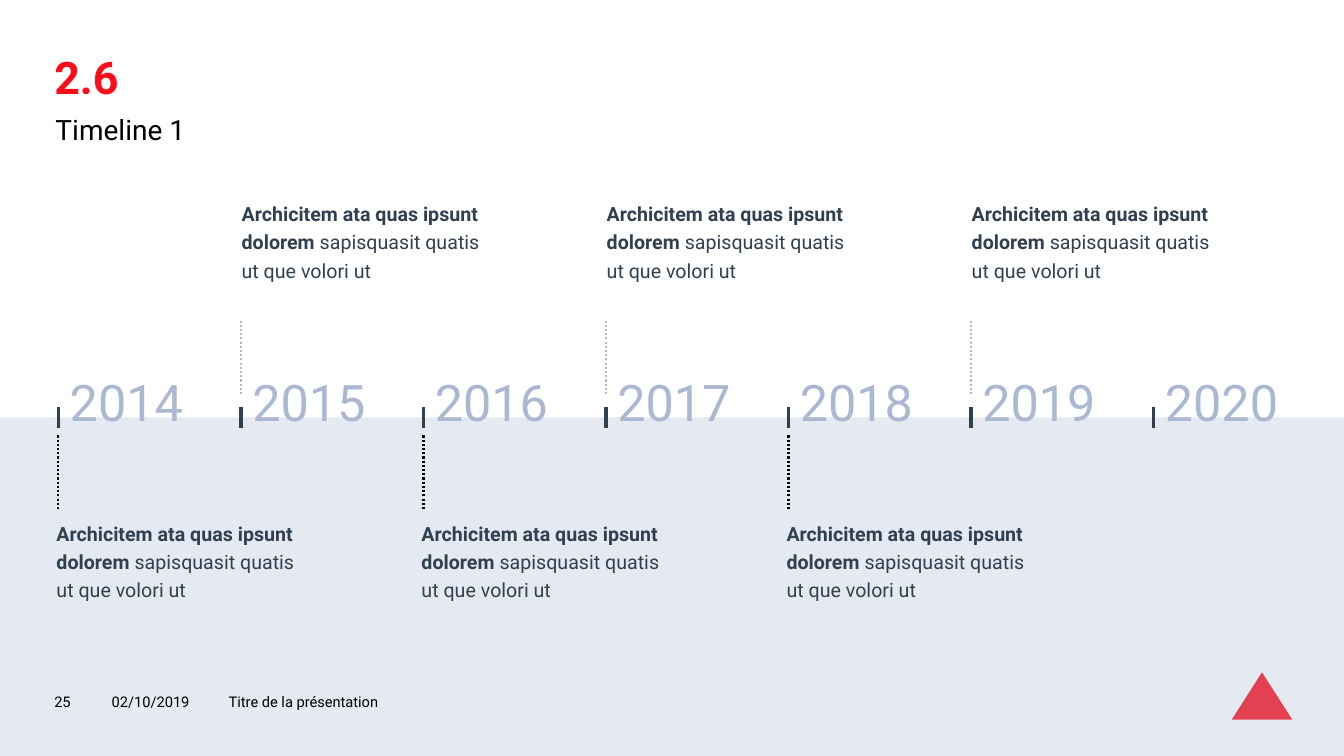
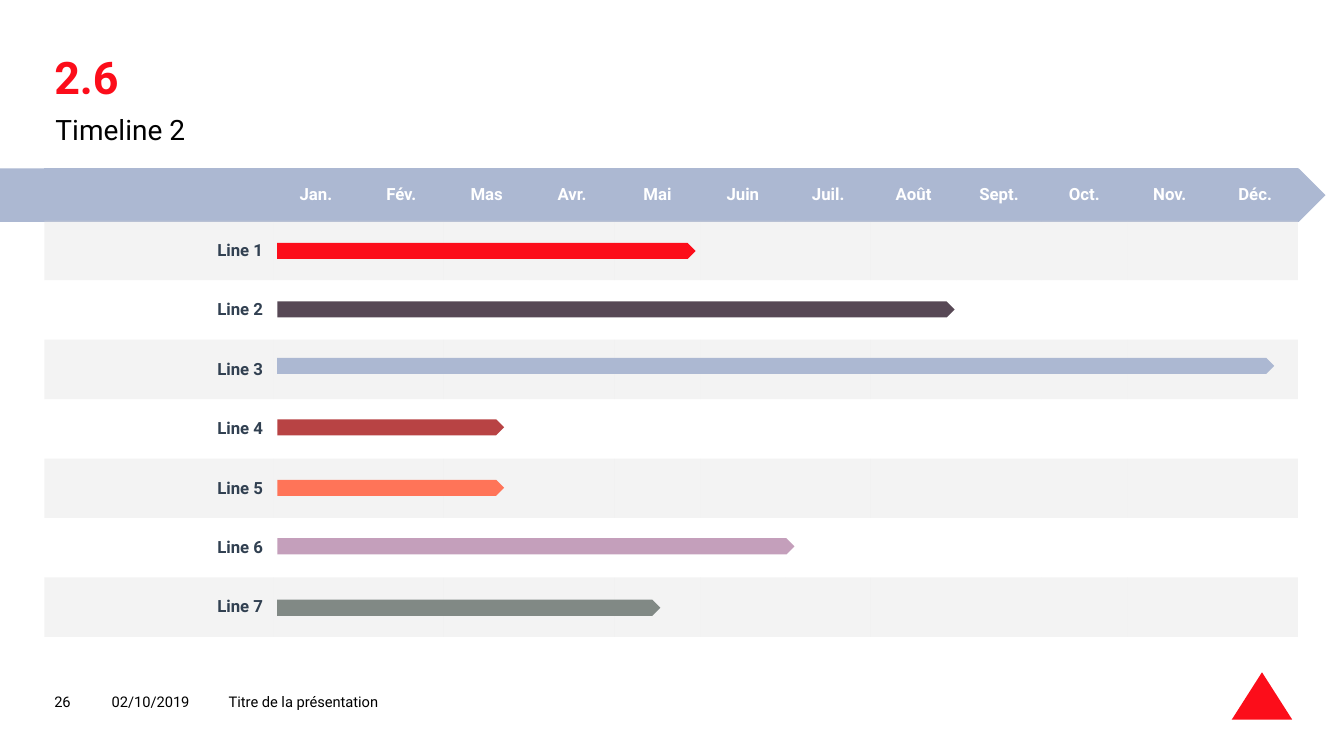
import pptx
import pptx.dml.color
import pptx.enum.dml
import pptx.enum.shapes
import pptx.enum.text
import pptx.oxml
import pptx.oxml.ns
import pptx.util

SHAPES = pptx.enum.shapes.MSO_SHAPE
ALIGN = pptx.enum.text.PP_ALIGN
MIDDLE = pptx.enum.text.MSO_ANCHOR.MIDDLE
TOP = pptx.enum.text.MSO_ANCHOR.TOP
DOTTED = pptx.enum.dml.MSO_LINE.ROUND_DOT

WIDTH = pptx.util.Inches(13.33)
HEIGHT = pptx.util.Inches(7.5)
FONT = "Roboto"
PLAIN_TABLE = "{2D5ABB26-0587-4C30-8999-92F81FD0307C}"

COLOURS = {
    "red": "FC0D1A",
    "black": "000000",
    "white": "FFFFFF",
    "navy": "314051",
    "blue": "ACB8D2",
    "grey": "D9D9D9",
    "plum": "574855",
    "brick": "B84344",
    "coral": "FF7458",
    "mauve": "C49FBB",
    "sage": "818985",
}

FOOTER = {"date": "02/10/2019", "title": "Titre de la présentation"}
FOOTER_EDGES = [3.3, 7.58, 16.28, 96.68]

YEARS = range(2014, 2021)
TICK_START, TICK_STEP = 4.35, 13.58
EVENT = [("Archicitem ata quas ipsunt dolorem ", True),
         ("sapisquasit quatis ut que volori ut", False)]
SIDES = [
    {"dots": (57.6, 67.33), "colour": "black", "shift": -1.65, "top": 67.73},
    {"dots": (42.4, 52.27), "colour": "blue", "shift": -1.45, "top": 25.47},
]

MONTHS = ["Jan.", "Fév.", "Mas", "Avr.", "Mai", "Juin",
          "Juil.", "Août", "Sept.", "Oct.", "Nov.", "Déc."]
BARS = [
    ("Line 1", 32.13, 31.13, "red"),
    ("Line 2", 39.87, 50.4, "plum"),
    ("Line 3", 47.33, 74.18, "blue"),
    ("Line 4", 55.47, 16.88, "brick"),
    ("Line 5", 63.47, 16.88, "coral"),
    ("Line 6", 71.2, 38.48, "mauve"),
    ("Line 7", 79.33, 28.5, "sage"),
]
PLANNER = {"left": 3.3, "top": 22.27, "width": 93.3, "height": 62}
LABEL_WIDTH, HEADER_HEIGHT = 17.03, 6.93
BAR_LEFT, BAR_HEIGHT = 20.63, 2.13


def across(share):
    return int(WIDTH * share / 100)


def down(share):
    return int(HEIGHT * share / 100)


def area(left, top, width, height):
    return across(left), down(top), across(width), down(height)


def rgb(name):
    return pptx.dml.color.RGBColor.from_string(COLOURS[name])


def apply(target, values):
    for name, value in values.items():
        setattr(target, name, value)


def paint(target, element, colour, opacity=100):
    target.fill.solid()
    target.fill.fore_color.rgb = rgb(colour)
    if opacity < 100:
        tint = next(element.iter(pptx.oxml.ns.qn("a:srgbClr")))
        tint.append(pptx.oxml.parse_xml(
            f'<a:alpha {pptx.oxml.ns.nsdecls("a")} val="{opacity * 1000}"/>'))


def write(frame, spans, size, colour, para_format=None):
    para = frame.paragraphs[0]
    apply(para, {"space_before": pptx.util.Pt(0), **(para_format or {})})
    for text, bold in spans:
        span = para.add_run()
        span.text = text
        apply(span.font, {"name": FONT, "size": pptx.util.Pt(size), "bold": bold})
        span.font.color.rgb = rgb(colour)


def add_text(page, place, spans, size, colour, frame_format=None, para_format=None):
    box = page.shapes.add_textbox(*area(*place))
    apply(box.text_frame, {"word_wrap": True, **(frame_format or {})})
    write(box.text_frame, spans, size, colour, para_format)


def add_block(page, kind, place, colour, opacity=100):
    block = page.shapes.add_shape(kind, *area(*place))
    block.shadow.inherit = False
    block.line.fill.background()
    paint(block, block.element, colour, opacity)


def add_upright(page, left, ends, colour, line_format):
    top, bottom = ends
    upright = page.shapes.add_connector(
        pptx.enum.shapes.MSO_CONNECTOR.STRAIGHT,
        across(left), down(top), across(left), down(bottom))
    apply(upright.line, line_format)
    upright.line.color.rgb = rgb(colour)
    upright.element.spPr.append(pptx.oxml.parse_xml(
        f'<a:effectLst {pptx.oxml.ns.nsdecls("a")}/>'))


def add_page(deck, number, title):
    page = deck.slides.add_slide(deck.slide_layouts[5])
    heading = page.shapes.title
    left, top, width, height = area(3.38, 14.13, 93.38, 5.87)
    apply(heading, {"left": left, "top": top, "width": width, "height": height})
    apply(heading.text_frame, {
        "word_wrap": True,
        "auto_size": pptx.enum.text.MSO_AUTO_SIZE.NONE,
        "vertical_anchor": MIDDLE,
    })
    write(heading.text_frame, [(title, False)], 20, "black", {"alignment": ALIGN.LEFT})
    add_text(page, (3.3, 6.67, 6.53, 7.07), [("2.6", True)], 32, "red",
             {"margin_right": 0, "vertical_anchor": TOP}, {"line_spacing": 0.9})
    add_block(page, SHAPES.ISOSCELES_TRIANGLE, (91.65, 88.93, 4.5, 6.27), "red")
    return page, str(number)


def add_footer(page, number):
    texts = [number, FOOTER["date"], FOOTER["title"]]
    for text, left, right in zip(texts, FOOTER_EDGES, FOOTER_EDGES[1:]):
        add_text(page, (left, 90.13, right - left, 5.33), [(text, False)], 10.5,
                 "black", {"vertical_anchor": MIDDLE})


def add_years(page):
    for index, year in enumerate(YEARS):
        left = TICK_START + index * TICK_STEP
        add_upright(page, left, (53.87, 56.67), "navy", {"width": pptx.util.Pt(2.25)})
        add_text(page, (left + 0.1, 48.4, 11.25, 9.47), [(str(year), False)], 36, "blue")
        if year == YEARS[-1]:
            continue
        side = SIDES[index % 2]
        add_upright(page, left, side["dots"], side["colour"],
                    {"width": pptx.util.Pt(1.5), "dash_style": DOTTED})
        add_text(page, (left + side["shift"], side["top"], 20.85, 16), EVENT, 14, "navy",
                 {"margin_left": pptx.util.Inches(0.2)}, {"line_spacing": 1.2})


def fill_cell(cell, text, colour, alignment, margins):
    apply(cell, {"vertical_anchor": MIDDLE, **margins})
    if text:
        write(cell.text_frame, [(text, True)], 12, colour, {"alignment": alignment})


def add_planner(page):
    frame = page.shapes.add_table(len(BARS) + 1, len(MONTHS) + 1, *area(*PLANNER.values()))
    table = frame.table
    apply(table, {"first_row": False, "horz_banding": False})
    next(frame.element.iter(pptx.oxml.ns.qn("a:tableStyleId"))).text = PLAIN_TABLE

    month_width = (PLANNER["width"] - LABEL_WIDTH) / len(MONTHS)
    for index, column in enumerate(table.columns):
        column.width = across(month_width if index else LABEL_WIDTH)
    line_height = (PLANNER["height"] - HEADER_HEIGHT) / len(BARS)
    for index, row in enumerate(table.rows):
        row.height = down(line_height if index else HEADER_HEIGHT)
        for cell in row.cells:
            if index == 0:
                paint(cell, cell._tc, "blue")
            elif index % 2:
                paint(cell, cell._tc, "grey", 30)
            else:
                cell.fill.background()

    narrow = pptx.util.Inches(0.04)
    for index, month in enumerate(MONTHS, 1):
        fill_cell(table.cell(0, index), month, "white", ALIGN.CENTER,
                  {"margin_left": narrow, "margin_right": narrow})
    for index, (label, *_) in enumerate(BARS, 1):
        fill_cell(table.cell(index, 0), label, "navy", ALIGN.RIGHT, {})


def build_years_page(deck):
    page, number = add_page(deck, 25, "Timeline 1")
    add_block(page, SHAPES.RECTANGLE, (0, 55.2, 100, 44.8), "blue", 30)
    add_footer(page, number)
    add_years(page)


def build_months_page(deck):
    page, number = add_page(deck, 26, "Timeline 2")
    add_block(page, SHAPES.PENTAGON, (0, PLANNER["top"], 98.63, 7.07), "blue")
    add_footer(page, number)
    add_planner(page)
    for _, top, length, colour in BARS:
        add_block(page, SHAPES.PENTAGON, (BAR_LEFT, top, length, BAR_HEIGHT), colour)


def main():
    deck = pptx.Presentation()
    apply(deck, {"slide_width": WIDTH, "slide_height": HEIGHT})
    build_years_page(deck)
    build_months_page(deck)
    deck.save("out.pptx")


if __name__ == "__main__":
    main()
